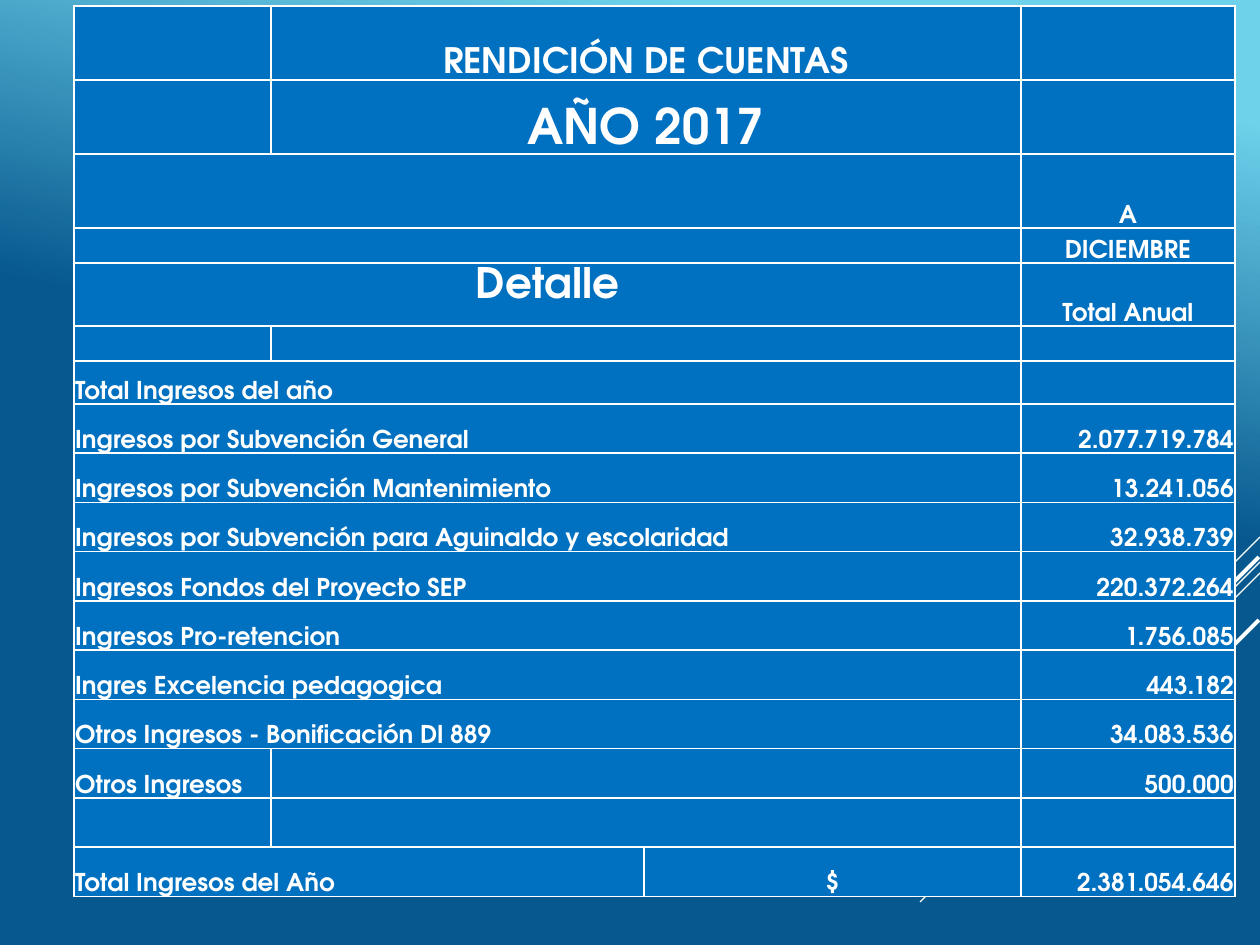
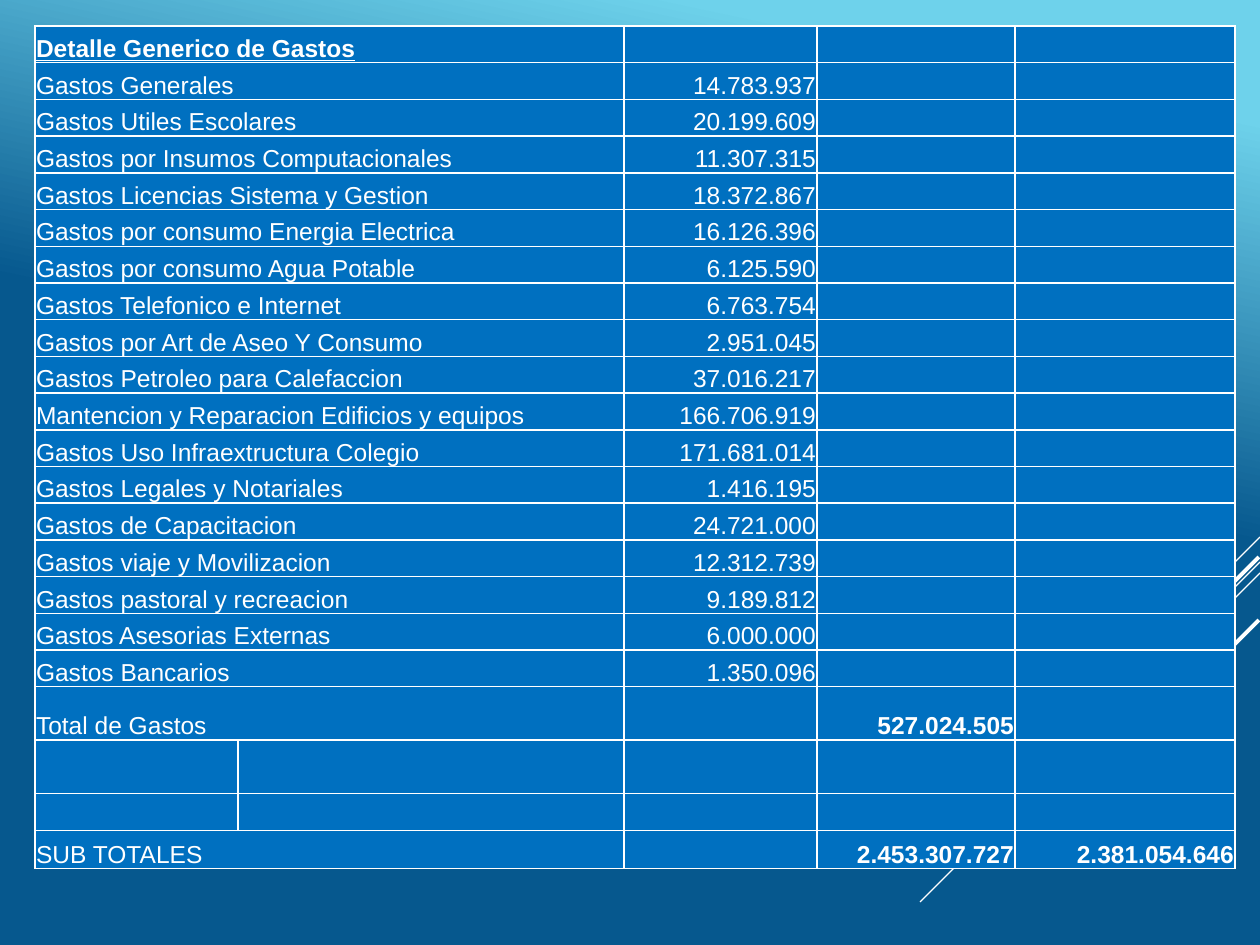
from dataclasses import dataclass
from itertools import accumulate

from lxml import etree
from pptx import Presentation
from pptx.dml.color import RGBColor
from pptx.enum.shapes import MSO_CONNECTOR
from pptx.enum.text import MSO_ANCHOR, PP_ALIGN
from pptx.oxml import parse_xml
from pptx.oxml.ns import qn
from pptx.util import Pt

STRAIGHT = MSO_CONNECTOR.STRAIGHT
BOTTOM = MSO_ANCHOR.BOTTOM
LEFT, CENTER, RIGHT = PP_ALIGN.LEFT, PP_ALIGN.CENTER, PP_ALIGN.RIGHT
DRAWING = "http://schemas.openxmlformats.org/drawingml/2006/main"


@dataclass(frozen=True)
class Theme:
    sky: str = "6ED2EB"
    deep: str = "06588E"
    cell: str = "0070C0"
    ink: str = "FFFFFF"
    income_font: str = "TeX Gyre Adventor"
    expense_font: str = "Arial"
    body: int = 14
    heading: int = 20
    detail: int = 24
    year: int = 28
    empty: int = 10
    border: float = 1
    thin: float = 0.75
    thick: float = 2.25


THEME = Theme()

LABEL = {"size": THEME.body, "align": LEFT}
AMOUNT = {"size": THEME.body, "align": RIGHT}
TOTAL = {**AMOUNT, "bold": True}
SECTION = {**LABEL, "bold": True, "underline": True}
CAPTION = {"size": THEME.body, "align": CENTER}
HEADING = {"size": THEME.heading, "align": CENTER}
YEAR = {"size": THEME.year, "align": CENTER}
DETAIL = {"size": THEME.detail, "align": CENTER, "spacing": 0.8, "foot": 21}

SPLIT, WIDE, SUM = (1, 2, 1), (3, 1), (2, 1, 1)
INCOME_BOX = (74, 6)
INCOME_COLUMNS = (197, 373, 377, 214)
INCOME_HEIGHTS = ((222, 3), (35, 1), (63, 1), (35, 1), (43, 1), (493, 10))
INCOME_SOURCES = (
    ("Ingresos por Subvención General", "2.077.719.784"),
    ("Ingresos por Subvención Mantenimiento", "13.241.056"),
    ("Ingresos por Subvención para Aguinaldo y escolaridad", "32.938.739"),
    ("Ingresos Fondos del Proyecto SEP", "220.372.264"),
    ("Ingresos Pro-retencion", "1.756.085"),
    ("Ingres Excelencia pedagogica", "443.182"),
    ("Otros Ingresos - Bonificación Dl 889", "34.083.536"),
)

JOINED, OPEN = (2, 1, 1, 1), (1, 1, 1, 1, 1)
EXPENSE_BOX = (35, 26)
EXPENSE_COLUMNS = (203, 386, 193, 198, 220)
EXPENSE_HEIGHTS = ((661, 18), (107, 2), (37, 1), (38, 1))
EXPENSES = (
    ("Gastos Generales", "14.783.937"),
    ("Gastos Utiles Escolares", "20.199.609"),
    ("Gastos por Insumos Computacionales", "11.307.315"),
    ("Gastos Licencias Sistema y Gestion", "18.372.867"),
    ("Gastos por consumo Energia Electrica", "16.126.396"),
    ("Gastos por consumo Agua Potable", "6.125.590"),
    ("Gastos Telefonico e Internet", "6.763.754"),
    ("Gastos por Art de Aseo Y Consumo", "2.951.045"),
    ("Gastos Petroleo para Calefaccion", "37.016.217"),
    ("Mantencion y Reparacion Edificios y equipos", "166.706.919"),
    ("Gastos Uso Infraextructura Colegio", "171.681.014"),
    ("Gastos Legales y Notariales", "1.416.195"),
    ("Gastos de Capacitacion", "24.721.000"),
    ("Gastos viaje y Movilizacion", "12.312.739"),
    ("Gastos pastoral y recreacion", "9.189.812"),
    ("Gastos Asesorias Externas", "6.000.000"),
    ("Gastos Bancarios", "1.350.096"),
)

RAYS = (
    (1260, 537, 104, THEME.thin),
    (1260, 562, 340, THEME.thin),
    (1260, 573, 217, THEME.thin),
    (1259, 557, 198, THEME.thick),
    (1259, 620, 144, THEME.thick),
)


def px(length):
    return round(length * 914400 / 126)


def color(code):
    return RGBColor.from_string(code)


def apply(target, values):
    for name, value in values.items():
        setattr(target, name, value)


def draw_backdrop(page):
    fill = page.background.fill
    fill.gradient()
    fill.gradient_angle = 258
    stops = ((0.1, THEME.sky), (0.45, THEME.deep))
    for stop, (position, code) in zip(fill.gradient_stops, stops):
        stop.position = position
        stop.color.rgb = color(code)
    for left, top, reach, width in RAYS:
        ends = (left, top, left - reach, top + reach)
        ray = page.shapes.add_connector(STRAIGHT, *map(px, ends))
        ray.line.color.rgb = color(THEME.ink)
        ray.line.width = Pt(width)
        etree.SubElement(ray._element.spPr, qn("a:effectLst"))


def paint_cell(cell):
    cell.fill.solid()
    cell.fill.fore_color.rgb = color(THEME.cell)
    apply(cell, {"vertical_anchor": BOTTOM, "margin_left": px(1), "margin_right": px(1),
                 "margin_top": px(1), "margin_bottom": 0})
    properties = cell._tc.get_or_add_tcPr()
    for index, side in enumerate(("lnL", "lnR", "lnT", "lnB")):
        properties.insert(index, parse_xml(
            f'<a:{side} xmlns:a="{DRAWING}" w="{Pt(THEME.border)}"><a:solidFill>'
            f'<a:srgbClr val="{THEME.ink}"/></a:solidFill></a:{side}>'))
    ending = etree.SubElement(cell.text_frame.paragraphs[0]._p, qn("a:endParaRPr"))
    ending.set("sz", str(THEME.empty * 100))


def write_cell(cell, text, style, font, bold):
    para = cell.text_frame.paragraphs[0]
    para.alignment = style["align"]
    if "spacing" in style:
        para.line_spacing = style["spacing"]
    cell.margin_bottom = px(style.get("foot", 0))
    span = para.add_run()
    span.text = text
    apply(span.font, {"name": font, "size": Pt(style["size"]),
                      "bold": style.get("bold", bold),
                      "underline": style.get("underline", False)})
    span.font.color.rgb = color(THEME.ink)


def draw_table(page, box, columns, heights, rows, font, bold):
    total = sum(height for height, count in heights)
    frame = page.shapes.add_table(
        len(rows), len(columns), *map(px, (*box, sum(columns), total)))
    table = frame.table
    apply(table, {"first_row": False, "horz_banding": False})
    for column, width in zip(table.columns, columns):
        column.width = px(width)
    row_heights = [height / count for height, count in heights for _ in range(count)]
    for row, height in zip(table.rows, row_heights):
        row.height = px(height)
    for cell in table.iter_cells():
        paint_cell(cell)
    for row_index, (spans, entries) in enumerate(rows):
        starts = accumulate(spans[:-1], initial=0)
        for start, width, entry in zip(starts, spans, entries):
            cell = table.cell(row_index, start)
            if width > 1:
                cell.merge(table.cell(row_index, start + width - 1))
            if entry:
                write_cell(cell, *entry, font, bold)


def line_item(spans, label, *amounts, style=AMOUNT):
    entries = [(label, LABEL)]
    entries += [(amount, style) if amount else None for amount in amounts]
    entries += [None] * (len(spans) - len(entries))
    return spans, entries


def draw_income(page):
    blank = (SPLIT, (None,) * 3)
    rows = [
        (SPLIT, (None, ("RENDICIÓN DE CUENTAS", HEADING), None)),
        (SPLIT, (None, ("AÑO 2017", YEAR), None)),
        (WIDE, (None, ("A", CAPTION))),
        (WIDE, (None, ("DICIEMBRE", CAPTION))),
        (WIDE, (("Detalle", DETAIL), ("Total Anual", CAPTION))),
        blank,
        line_item(WIDE, "Total Ingresos del año"),
        *(line_item(WIDE, *source) for source in INCOME_SOURCES),
        line_item(SPLIT, "Otros Ingresos", None, "500.000"),
        blank,
        (SUM, (("Total Ingresos del Año", LABEL), ("$", CAPTION), ("2.381.054.646", AMOUNT))),
    ]
    draw_table(page, INCOME_BOX, INCOME_COLUMNS, INCOME_HEIGHTS, rows,
               THEME.income_font, True)


def draw_expenses(page):
    blank = (OPEN, (None,) * 5)
    rows = [
        (JOINED, (("Detalle Generico de Gastos", SECTION), None, None, None)),
        *(line_item(JOINED, *expense) for expense in EXPENSES),
        line_item(JOINED, "Total de Gastos", None, "527.024.505", style=TOTAL),
        blank,
        blank,
        line_item(JOINED, "SUB TOTALES", None, "2.453.307.727", "2.381.054.646", style=TOTAL),
    ]
    draw_table(page, EXPENSE_BOX, EXPENSE_COLUMNS, EXPENSE_HEIGHTS, rows,
               THEME.expense_font, False)


def main():
    deck = Presentation()
    apply(deck, {"slide_width": px(1260), "slide_height": px(945)})
    for draw in (draw_income, draw_expenses):
        page = deck.slides.add_slide(deck.slide_layouts[6])
        draw_backdrop(page)
        draw(page)
    deck.save("out.pptx")


if __name__ == "__main__":
    main()
